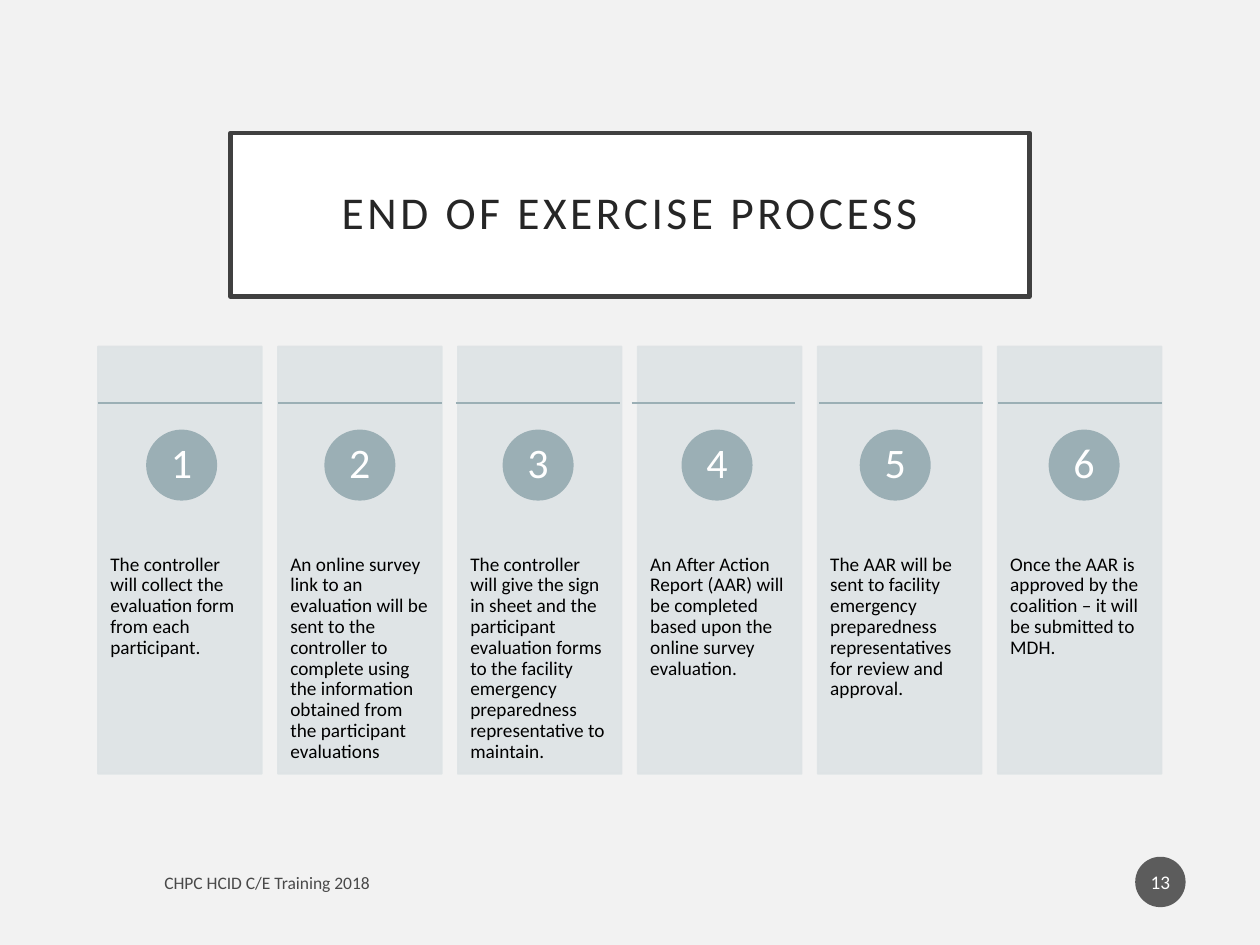
from dataclasses import dataclass

from lxml.etree import SubElement
from pptx import Presentation
from pptx.dml.color import RGBColor
from pptx.enum.shapes import MSO_CONNECTOR, MSO_SHAPE
from pptx.enum.text import MSO_ANCHOR, PP_ALIGN
from pptx.oxml.ns import qn
from pptx.util import Pt

FONT = "Calibri"
COLORS = {
    "background": "F2F2F2",
    "white": "FFFFFF",
    "frame": "404040",
    "title": "262626",
    "panel": "DEE3E5",
    "accent": "9BAFB5",
    "body": "000000",
    "footer": "494949",
    "badge": "1D1D1D",
}

# Column grid, in points
FIRST_LEFT, PITCH, PANEL_WIDTH = 56, 102.84, 93.6
PANEL_TOP, PANEL_HEIGHT = 198, 244.2
RULE_TOP = 230.4
CIRCLE_TOP, CIRCLE_SIZE = 246, 39.6
BODY_TOP, BODY_HEIGHT = 290.9, 146.9


@dataclass
class Step:
    text: str
    circle_offset: float  # from the panel's left side
    rule_offset: float = 0


STEPS = [
    Step("The controller will collect the evaluation form from each participant.", 28),
    Step("An online survey link to an evaluation will be sent to the controller to "
         "complete using the information obtained from the participant evaluations", 27),
    Step("The controller will give the sign in sheet and the participant evaluation "
         "forms to the facility emergency preparedness representative to maintain.",
         26, -1.2),
    Step("An After Action Report (AAR) will be completed based upon the "
         "online survey evaluation.", 25.4, -3.6),
    Step("The AAR will be sent to facility emergency preparedness representatives "
         "for review and approval.", 24.4, 0.5),
    Step("Once the AAR is approved by the coalition – it will be submitted to MDH.", 29.5),
]


def rgb(name: str) -> RGBColor:
    return RGBColor.from_string(COLORS[name])


def set_opacity(shape, percent: int) -> None:
    for color in shape._element.spPr.iter(qn("a:srgbClr")):
        SubElement(color, qn("a:alpha")).set("val", str(percent * 1000))


def add_block(slide, kind, box: tuple, fill: str, line: str = "", weight: float = 1):
    block = slide.shapes.add_shape(kind, *map(Pt, box))
    block.shadow.inherit = False
    block.fill.solid()
    block.fill.fore_color.rgb = rgb(fill)
    if line:
        block.line.color.rgb = rgb(line)
        block.line.width = Pt(weight)
    else:
        block.line.fill.background()
    return block


def write(shape, text: str, size: float, color: str, insets: tuple = (7.2, 3.6),
          align=PP_ALIGN.LEFT, anchor=MSO_ANCHOR.MIDDLE, spacing: float = 1.0):
    frame = shape.text_frame
    frame.word_wrap = True
    frame.vertical_anchor = anchor
    frame.margin_left = frame.margin_right = Pt(insets[0])
    frame.margin_top = frame.margin_bottom = Pt(insets[1])
    paragraph = frame.paragraphs[0]
    paragraph.alignment = align
    paragraph.line_spacing = spacing
    run = paragraph.add_run()
    run.text = text
    paragraph.font.name = FONT
    paragraph.font.size = Pt(size)
    paragraph.font.color.rgb = rgb(color)
    return run


def add_rule(slide, left: float) -> None:
    rule = slide.shapes.add_connector(
        MSO_CONNECTOR.STRAIGHT, Pt(left), Pt(RULE_TOP), Pt(left + PANEL_WIDTH), Pt(RULE_TOP))
    rule.line.color.rgb = rgb("accent")
    rule.line.width = Pt(1)
    SubElement(rule._element.spPr, qn("a:effectLst"))


def add_step(slide, index: int, step: Step) -> None:
    left = FIRST_LEFT + index * PITCH
    panel = add_block(slide, MSO_SHAPE.RECTANGLE,
                      (left, PANEL_TOP, PANEL_WIDTH, PANEL_HEIGHT), "panel", "panel")
    set_opacity(panel, 90)

    body = slide.shapes.add_textbox(
        Pt(left), Pt(BODY_TOP), Pt(PANEL_WIDTH), Pt(BODY_HEIGHT))
    write(body, step.text, 11, "body", (7.2, 26), anchor=MSO_ANCHOR.TOP, spacing=0.9)

    circle = add_block(
        slide, MSO_SHAPE.OVAL,
        (left + step.circle_offset, CIRCLE_TOP, CIRCLE_SIZE, CIRCLE_SIZE), "accent", "accent")
    write(circle, str(index + 1), 24, "white", (3, 1), PP_ALIGN.CENTER, spacing=0.9)

    add_rule(slide, left + step.rule_offset)


def main() -> None:
    deck = Presentation()
    deck.slide_width, deck.slide_height = Pt(720), Pt(540)
    slide = deck.slides.add_slide(deck.slide_layouts[6])
    slide.background.fill.solid()
    slide.background.fill.fore_color.rgb = rgb("background")

    # Title frame
    title = add_block(slide, MSO_SHAPE.RECTANGLE, (131.8, 75.9, 456.5, 93.6),
                      "white", "frame", 2.5)
    heading = write(title, "END OF EXERCISE PROCESS", 26, "title", (14.4, 14.4),
                    PP_ALIGN.CENTER, spacing=0.9)
    heading._r.get_or_add_rPr().set("spc", "200")

    # Numbered steps
    for index, step in enumerate(STEPS):
        add_step(slide, index, step)

    # Footer and page number
    footer = slide.shapes.add_textbox(Pt(86.8), Pt(491.4), Pt(358.6), Pt(25.2))
    write(footer, "CHPC HCID C/E Training 2018", 10, "footer")
    badge = add_block(slide, MSO_SHAPE.OVAL, (648.7, 489.6, 28.8, 28.8), "badge")
    set_opacity(badge, 70)
    write(badge, "13", 11, "white", (1.4, 3.6), PP_ALIGN.CENTER)

    deck.save("out.pptx")


if __name__ == "__main__":
    main()
